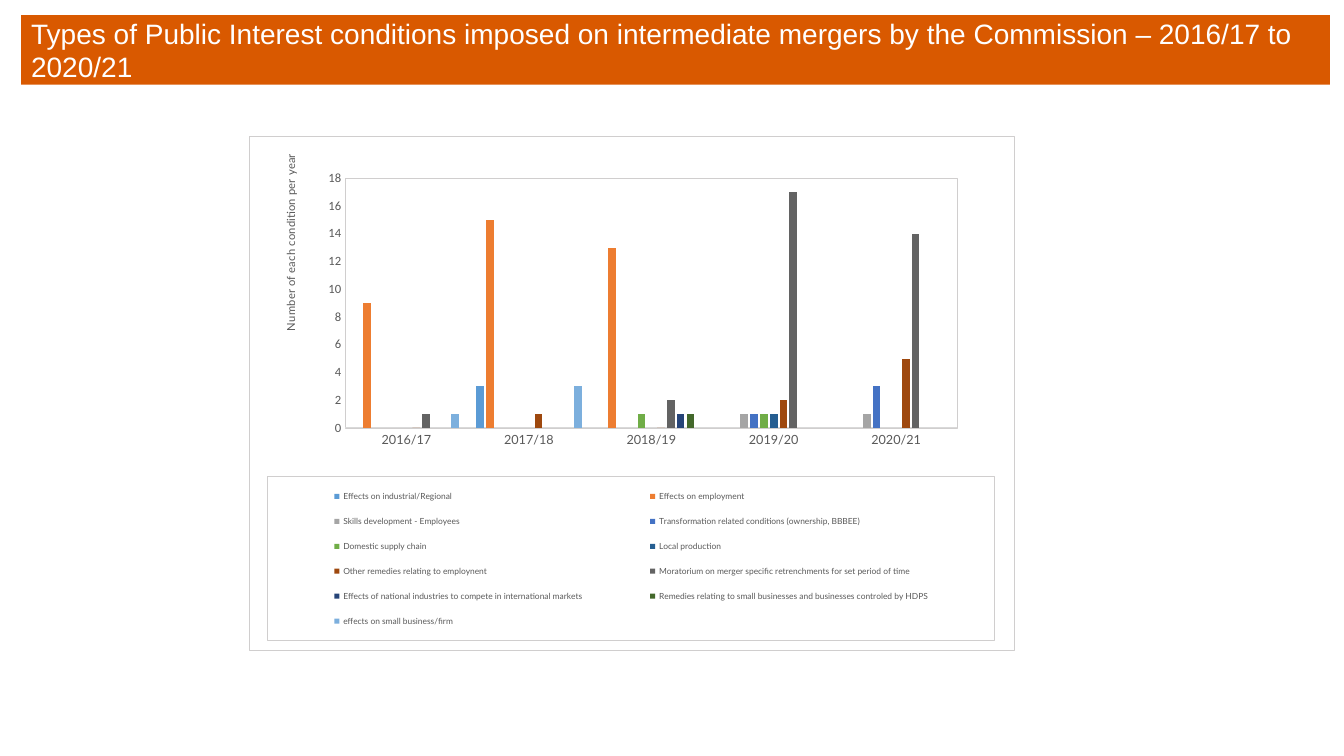
from dataclasses import dataclass

from lxml import etree
from pptx import Presentation
from pptx import util as u
from pptx.chart import data as chart_data
from pptx.dml.color import RGBColor
from pptx.enum import chart as charts, shapes, text
from pptx.oxml import ns


@dataclass(frozen=True)
class Theme:
    """Colours, fonts and type sizes of the slide."""
    banner: str = "D95900"
    paper: str = "FFFFFF"
    ink: str = "595959"
    rule: str = "D9D9D9"
    frame: str = "D0CECE"
    title_font: str = "Arial"
    chart_font: str = "Calibri"
    label_font: str = "Lato"
    title_size: int = 20
    chart_size: int = 10
    tick_size: int = 9
    axis_title_size: int = 8
    legend_size: int = 6


THEME = Theme()
TITLE = ("Types of Public Interest conditions imposed on intermediate mergers "
         "by the Commission – 2016/17 to 2020/21")
AXIS_TITLE = "Number of each condition per year"
YEARS = ["2016/17", "2017/18", "2018/19", "2019/20", "2020/21"]
CONDITIONS = [
    ("Effects on industrial/Regional", "5B9BD5", [None, 3, None, None, None]),
    ("Effects on employment", "ED7D31", [9, 15, 13, None, None]),
    ("Skills development - Employees", "A5A5A5", [None, None, None, 1, 1]),
    ("Transformation related conditions (ownership, BBBEE)", "4472C4",
     [None, None, None, 1, 3]),
    ("Domestic supply chain", "70AD47", [None, None, 1, 1, None]),
    ("Local production", "255E91", [None, None, None, 1, None]),
    ("Other remedies relating to employnent", "9E480E", [0, 1, 0, 2, 5]),
    ("Moratorium on merger specific retrenchments for set period of time",
     "636363", [1, None, 2, 17, 14]),
    ("Effects of national industries to compete in international markets",
     "264478", [None, None, 1, None, None]),
    ("Remedies relating to small businesses and businesses controled by HDPS",
     "43682B", [None, None, 1, None, None]),
    ("effects on small business/firm", "7CAFDD", [1, 3, None, None, None]),
]


def style_font(font, size, colour, name):
    """Set the size, colour and typeface of a font."""
    font.size = u.Pt(size)
    font.color.rgb = RGBColor.from_string(colour)
    font.name = name


def place_after(anchor, **fractions):
    """Put a manual chart layout right after an element."""
    parent = anchor.getparent()
    for old in parent.findall(ns.qn("c:layout")):
        parent.remove(old)
    layout = etree.Element(ns.qn("c:layout"))
    manual = etree.SubElement(layout, ns.qn("c:manualLayout"))
    if "w" in fractions and parent.tag == ns.qn("c:plotArea"):
        etree.SubElement(manual, ns.qn("c:layoutTarget")).set("val", "inner")
    for side in ("x", "y"):
        etree.SubElement(manual, ns.qn(f"c:{side}Mode")).set("val", "edge")
    for key, value in fractions.items():
        etree.SubElement(manual, ns.qn(f"c:{key}")).set("val", str(value))
    anchor.addnext(layout)


def outline(colour, fill=None):
    """Return chart shape properties with a thin line and optional fill."""
    props = etree.Element(ns.qn("c:spPr"))
    line = etree.Element(ns.qn("a:ln"), w=str(u.Pt(0.75)))
    paints = [(props, fill), (line, colour)]
    for holder, paint in paints:
        if paint:
            solid = etree.SubElement(holder, ns.qn("a:solidFill"))
            etree.SubElement(solid, ns.qn("a:srgbClr")).set("val", paint)
        else:
            etree.SubElement(holder, ns.qn("a:noFill"))
    props.append(line)
    return props


def add_banner(page, box):
    """Draw the coloured title bar in the box."""
    bar = page.shapes.add_shape(shapes.MSO_SHAPE.RECTANGLE, *box)
    bar.shadow.inherit = False
    bar.fill.solid()
    bar.fill.fore_color.rgb = RGBColor.from_string(THEME.banner)
    bar.line.fill.background()
    frame = bar.text_frame
    frame.word_wrap = True
    frame.vertical_anchor = text.MSO_ANCHOR.MIDDLE
    frame.text = TITLE
    para = frame.paragraphs[0]
    para.alignment = text.PP_ALIGN.LEFT
    style_font(para.runs[0].font, THEME.title_size, THEME.paper, THEME.title_font)


def style_axes(chart):
    """Format both axes and the value axis title."""
    years, counts = chart.category_axis, chart.value_axis
    for axis, name in ((years, THEME.label_font), (counts, THEME.chart_font)):
        axis.has_major_gridlines = False
        axis.major_tick_mark = charts.XL_TICK_MARK.NONE
        axis.minor_tick_mark = charts.XL_TICK_MARK.NONE
        style_font(axis.tick_labels.font, THEME.tick_size, THEME.ink, name)
    years.format.line.color.rgb = RGBColor.from_string(THEME.rule)
    years.format.line.width = u.Pt(0.75)
    counts.format.line.fill.background()
    counts.minimum_scale, counts.maximum_scale, counts.major_unit = 0, 18, 2
    title = counts.axis_title
    title.text_frame.text = AXIS_TITLE
    span = title.text_frame.paragraphs[0].runs[0]
    style_font(span.font, THEME.axis_title_size, THEME.ink, THEME.label_font)
    span.font.bold = False
    body = next(title._element.iter(ns.qn("a:bodyPr")))
    body.set("rot", "-5400000")
    body.set("vert", "horz")
    place_after(title._element.find(ns.qn("c:tx")), x=0.04, y=0.03)


def style_legend(chart):
    """Place the framed legend under the plot."""
    chart.has_legend = True
    legend = chart.legend
    legend.position = charts.XL_LEGEND_POSITION.BOTTOM
    legend.include_in_layout = False
    style_font(legend.font, THEME.legend_size, THEME.ink, THEME.label_font)
    element = legend._element
    place_after(element.find(ns.qn("c:legendPos")), x=0.024, y=0.662, w=0.949, h=0.319)
    element.find(ns.qn("c:txPr")).addprevious(outline(THEME.frame))


def add_conditions_chart(page, box):
    """Draw the clustered columns of conditions per year in the box."""
    figures = chart_data.CategoryChartData()
    figures.categories = YEARS
    for name, _, values in CONDITIONS:
        figures.add_series(name, values)
    chart = page.shapes.add_chart(
        charts.XL_CHART_TYPE.COLUMN_CLUSTERED, *box, figures).chart
    chart.has_title = False
    style_font(chart.font, THEME.chart_size, "000000", THEME.chart_font)
    plot = chart.plots[0]
    plot.vary_by_categories = False
    plot.gap_width, plot.overlap = 219, -27
    for series, (_, colour, _) in zip(plot.series, CONDITIONS):
        series.invert_if_negative = False
        series.format.fill.solid()
        series.format.fill.fore_color.rgb = RGBColor.from_string(colour)
    style_axes(chart)
    style_legend(chart)
    whole = chart._chartSpace.find(ns.qn("c:chart"))
    whole.addnext(outline(THEME.frame, THEME.paper))
    area = whole.find(ns.qn("c:plotArea"))
    area.append(outline(THEME.frame))
    columns = area.find(ns.qn("c:barChart"))
    place_after(columns, x=0.125, y=0.081, w=0.8, h=0.486)
    area.insert(0, area.find(ns.qn("c:layout")))


def main():
    """Build and save the one-slide deck."""
    deck = Presentation()
    deck.slide_width, deck.slide_height = u.Inches(13.33), u.Inches(7.5)
    page = deck.slides.add_slide(deck.slide_layouts[6])
    add_banner(page, [u.Inches(n) for n in (0.21, 0.15, 12.98, 0.69)])
    add_conditions_chart(page, [u.Inches(n) for n in (2.47, 1.35, 7.6, 5.11)])
    deck.save("out.pptx")


if __name__ == "__main__":
    main()
